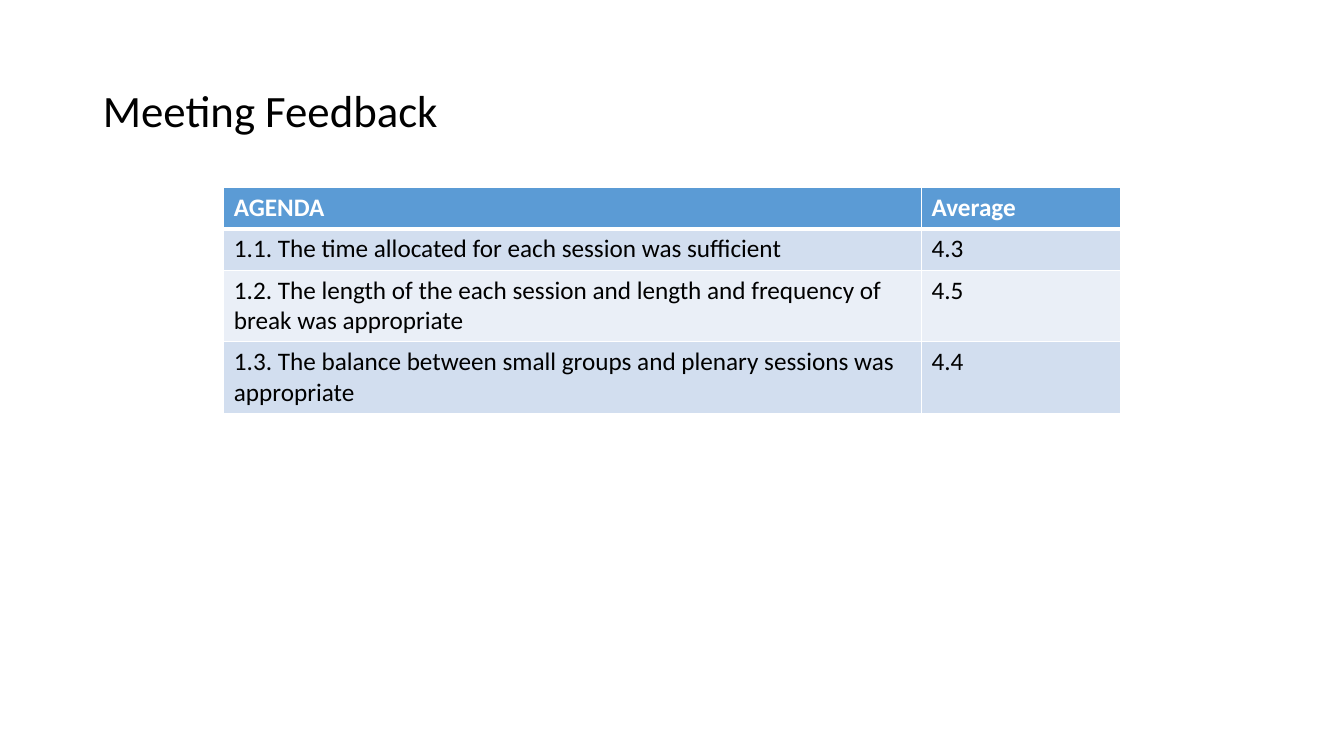
import pptx
import pptx.dml.color
import pptx.enum.text
import pptx.oxml
import pptx.oxml.ns
import pptx.util
from pptx.util import Inches

HEX = {
    "text": "000000",
    "white": "FFFFFF",
    "head": "5B9BD5",
    "odd": "D2DEEF",
    "even": "EAEFF7",
}
ROWS = [
    ("AGENDA", "Average"),
    ("1.1. The time allocated for each session was sufficient", "4.3"),
    ("1.2. The length of the each session and length and frequency of "
     "break was appropriate", "4.5"),
    ("1.3. The balance between small groups and plenary sessions was "
     "appropriate", "4.4"),
]
WIDTHS = (6.92, 1.97)
HEIGHT = 0.41


def tint(name):
    return pptx.dml.color.RGBColor.from_string(HEX[name])


def style(para, size, color, bold=False):
    form = {"name": "Calibri", "size": pptx.util.Pt(size), "bold": bold}
    for key, value in form.items():
        setattr(para.font, key, value)
    para.font.color.rgb = tint(color)


def add_title(slide, text):
    title = slide.shapes.title
    place = {"left": 0.92, "top": 0.4, "width": 11.5, "height": 1.45}
    for key, value in place.items():
        setattr(title, key, Inches(value))
    frame = title.text_frame
    frame.text = text
    frame.word_wrap = True
    frame.vertical_anchor = pptx.enum.text.MSO_ANCHOR.MIDDLE
    para = frame.paragraphs[0]
    para.alignment = pptx.enum.text.PP_ALIGN.LEFT
    para.line_spacing = 0.9
    style(para, 32, "text")


def add_edge(cell, side, width):
    """Draw a white border on one side of the cell: L, R, T or B."""
    line = pptx.oxml.parse_xml(
        f'<a:ln{side} {pptx.oxml.ns.nsdecls("a")} w="{pptx.util.Pt(width)}">'
        f'<a:solidFill><a:srgbClr val="{HEX["white"]}"/></a:solidFill>'
        f'</a:ln{side}>')
    cell._tc.get_or_add_tcPr().append(line)


def fill_cell(cell, text, row):
    head = row == 0
    edges = {"L": 1, "R": 1, "T": 3 if row == 1 else 1, "B": 3 if head else 1}
    for side, width in edges.items():
        add_edge(cell, side, width)
    cell.fill.solid()
    cell.fill.fore_color.rgb = tint(
        "head" if head else "odd" if row % 2 else "even")
    cell.text = text
    style(cell.text_frame.paragraphs[0], 18, "white" if head else "text", head)


def add_scores(slide):
    table = slide.shapes.add_table(
        len(ROWS), len(WIDTHS), Inches(2.22), Inches(1.86),
        Inches(sum(WIDTHS)), Inches(HEIGHT * len(ROWS))).table
    for col, width in zip(table.columns, WIDTHS):
        col.width = Inches(width)
    for i, texts in enumerate(ROWS):
        table.rows[i].height = Inches(HEIGHT)
        for j, text in enumerate(texts):
            fill_cell(table.cell(i, j), text, i)


def main():
    deck = pptx.Presentation()
    deck.slide_width, deck.slide_height = Inches(13.33), Inches(7.5)
    slide = deck.slides.add_slide(deck.slide_layouts[5])
    add_title(slide, "Meeting Feedback")
    add_scores(slide)
    deck.save("out.pptx")


if __name__ == "__main__":
    main()
